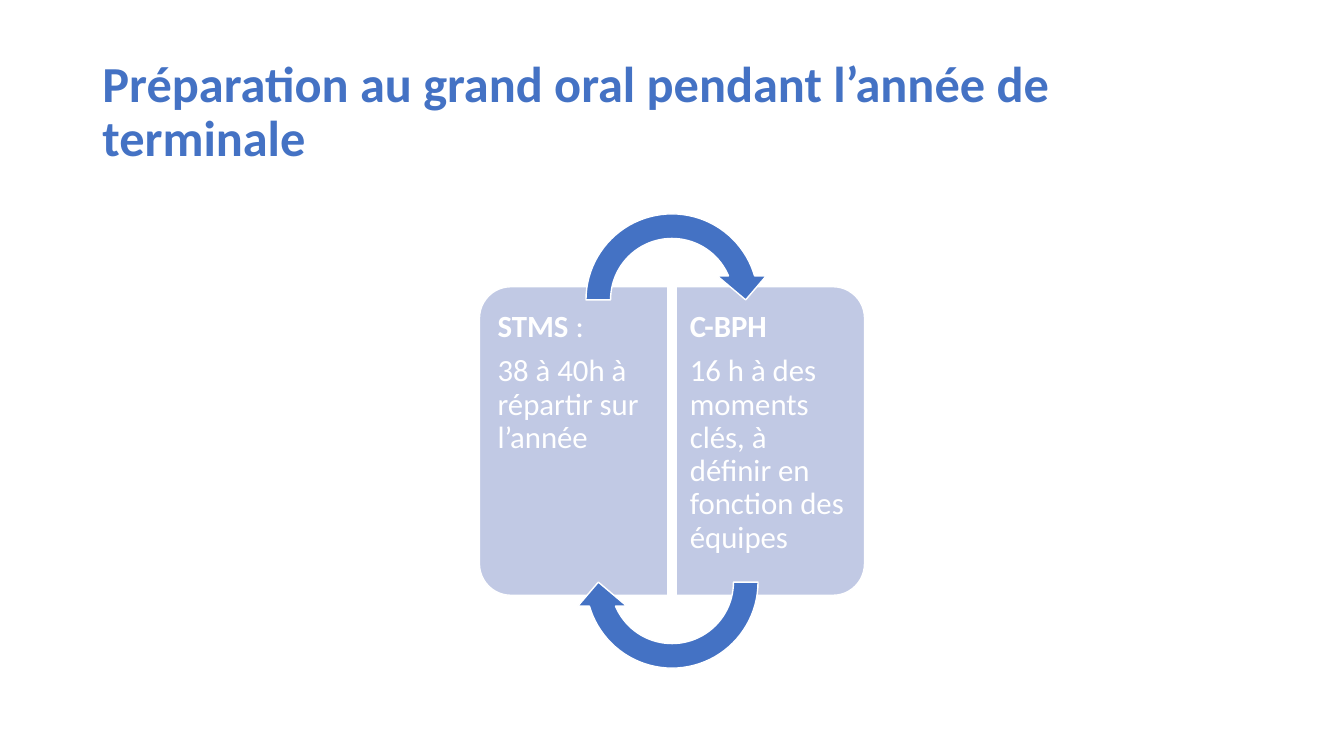
"""Build the slide on preparing the grand oral: two halves of a cycle joined by arrows."""
from dataclasses import dataclass

from pptx import Presentation
from pptx.dml.color import RGBColor
from pptx.enum import shapes, text
from pptx.util import Pt


@dataclass(frozen=True)
class Theme:
    """Colours, font and type sizes of the slide."""
    accent: RGBColor = RGBColor(0x44, 0x72, 0xC4)
    panel: RGBColor = RGBColor(0xC1, 0xC9, 0xE4)
    white: RGBColor = RGBColor(0xFF, 0xFF, 0xFF)
    font: str = "Calibri"
    title_size: float = 36
    body_size: float = 22


THEME = Theme()
CENTER_X, CENTER_Y = 480, 315
PANEL_LENGTH, PANEL_WIDTH, PANEL_OFFSET = 220.4, 134.6, 70.2
TEXT_WIDTH, TEXT_HEIGHT, TEXT_OFFSET = 128.2, 207.4, 67
ARROW_SIZE, ARROW_OFFSET = 140.4, 100.8
INNER_INSET, OUTER_INSET, VERTICAL_INSET = 6.6, 9.9, 11
ARROW_ADJUSTMENTS = (0.125, 11.42, 204.58, 108, 0.125)


def add_span(para, words, *, size, color, bold=False):
    """Append formatted words to a paragraph."""
    span = para.add_run()
    span.text = words
    span.font.name = THEME.font
    span.font.size = Pt(size)
    span.font.bold = bold
    span.font.color.rgb = color


def add_shape(page, kind, center, size, *, fill, rotation=0, adjustments=()):
    """Draw a filled, white-edged preset shape around its center."""
    (x, y), (width, height) = center, size
    shape = page.shapes.add_shape(kind, Pt(x - width / 2), Pt(y - height / 2),
                                  Pt(width), Pt(height))
    for index, value in enumerate(adjustments):
        shape.adjustments[index] = value
    shape.rotation = rotation
    shape.shadow.inherit = False
    shape.fill.solid()
    shape.fill.fore_color.rgb = fill
    shape.line.color.rgb = THEME.white
    shape.line.width = Pt(1)


def add_title(page, words):
    """Fill and place the title placeholder."""
    title = page.shapes.title
    title.left, title.top, title.width, title.height = Pt(66), Pt(28.8), Pt(828), Pt(104.4)
    title.text_frame.vertical_anchor = text.MSO_ANCHOR.MIDDLE
    para = title.text_frame.paragraphs[0]
    para.alignment = text.PP_ALIGN.LEFT
    para.line_spacing = 0.9
    add_span(para, words, size=THEME.title_size, color=THEME.accent, bold=True)


def add_panel(page, side, lines):
    """Draw one half of the cycle, left for side -1 and right for side 1."""
    add_shape(page, shapes.MSO_SHAPE.ROUND_2_SAME_RECTANGLE,
              (CENTER_X + side * PANEL_OFFSET, CENTER_Y), (PANEL_LENGTH, PANEL_WIDTH),
              fill=THEME.panel, rotation=side * 90 % 360, adjustments=(0.167, 0))
    box = page.shapes.add_textbox(Pt(CENTER_X + side * TEXT_OFFSET - TEXT_WIDTH / 2),
                                  Pt(CENTER_Y - TEXT_HEIGHT / 2),
                                  Pt(TEXT_WIDTH), Pt(TEXT_HEIGHT))
    frame = box.text_frame
    frame.word_wrap = True
    insets = (INNER_INSET, OUTER_INSET)[::-side]
    frame.margin_left, frame.margin_right = (Pt(inset) for inset in insets)
    frame.margin_top = frame.margin_bottom = Pt(VERTICAL_INSET)
    for index, spans in enumerate(lines):
        para = frame.add_paragraph() if index else frame.paragraphs[0]
        para.line_spacing = 0.9
        para.space_after = Pt(0.35 * THEME.body_size)
        for words, bold in spans:
            add_span(para, words, size=THEME.body_size, color=THEME.white, bold=bold)


def add_arrow(page, side):
    """Draw a circular arrow, above for side -1 and below for side 1."""
    add_shape(page, shapes.MSO_SHAPE.CIRCULAR_ARROW,
              (CENTER_X, CENTER_Y + side * ARROW_OFFSET), (ARROW_SIZE, ARROW_SIZE),
              fill=THEME.accent, rotation=90 + side * 90, adjustments=ARROW_ADJUSTMENTS)


def main():
    """Assemble the slide and save the deck."""
    deck = Presentation()
    deck.slide_width, deck.slide_height = Pt(960), Pt(540)
    page = deck.slides.add_slide(deck.slide_layouts.get_by_name("Title Only"))
    add_title(page, "Préparation au grand oral pendant l’année de terminale")
    add_panel(page, -1, [[("STMS ", True), (":", False)],
                         [("38 à 40h à répartir sur l’année", False)]])
    add_panel(page, 1, [[("C-BPH", True)],
                        [("16 h à des moments clés, à définir en fonction des équipes", False)]])
    for side in (-1, 1):
        add_arrow(page, side)
    deck.save("out.pptx")


if __name__ == "__main__":
    main()
